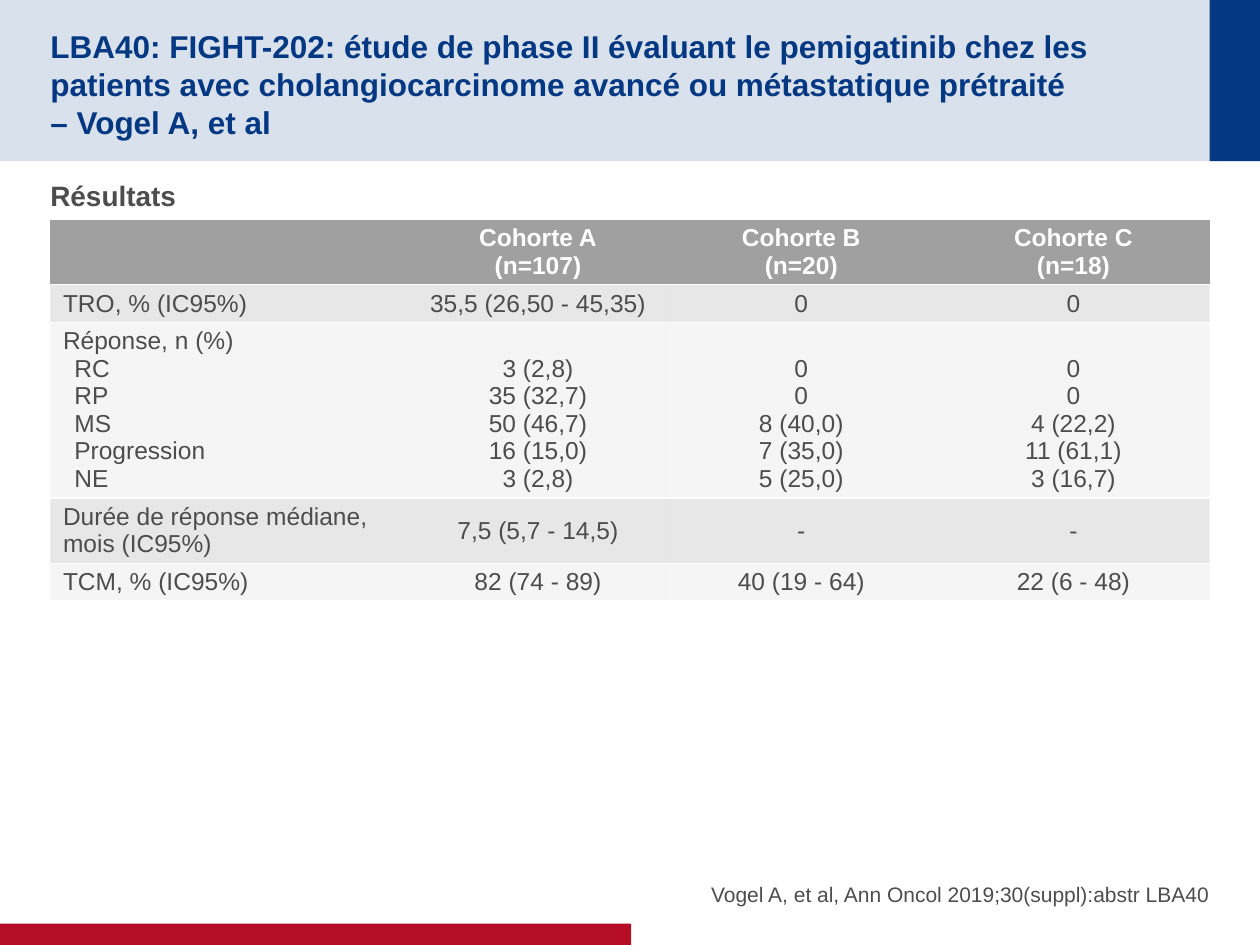
from lxml.etree import SubElement
from pptx import Presentation
from pptx.dml.color import RGBColor
from pptx.enum.shapes import MSO_SHAPE
from pptx.enum.text import MSO_ANCHOR, MSO_AUTO_SIZE, PP_ALIGN
from pptx.oxml import parse_xml
from pptx.oxml.ns import nsdecls, qn
from pptx.util import Inches, Pt

# Content
TITLE = ["LBA40: FIGHT-202: étude de phase II évaluant le pemigatinib chez les "
         "patients avec cholangiocarcinome avancé ou métastatique prétraité",
         "– Vogel A, et al"]
HEADING = "Résultats"
SOURCE = "Vogel A, et al, Ann Oncol 2019;30(suppl):abstr LBA40"
HEADER = ["", "Cohorte A\v(n=107)", "Cohorte B\v(n=20)", "Cohorte C\v(n=18)"]
ROWS = [
    ["TRO, % (IC95%)", "35,5 (26,50 - 45,35)", "0", "0"],
    ["Réponse, n (%)\nRC\nRP\nMS\nProgression\nNE",
     "3 (2,8)\n35 (32,7)\n50 (46,7)\n16 (15,0)\n3 (2,8)",
     "0\n0\n8 (40,0)\n7 (35,0)\n5 (25,0)",
     "0\n0\n4 (22,2)\n11 (61,1)\n3 (16,7)"],
    ["Durée de réponse médiane, mois (IC95%)", "7,5 (5,7 - 14,5)", "-", "-"],
    ["TCM, % (IC95%)", "82 (74 - 89)", "40 (19 - 64)", "22 (6 - 48)"],
]
COL_WIDTHS = [2.86, 2.02, 2.16, 2.16]
ROW_HEIGHTS = [0.52, 0.3, 1.39, 0.52, 0.29]
BAND_ALPHAS = [25, 10]
COLORS = {"navy": "043882", "red": "B60D27", "text": "4D4D4D",
          "gray": "A0A0A0", "white": "FFFFFF"}
LEFT, WIDTH = 0.4, 9.2
NO_STYLE = "{2D5ABB26-0587-4C30-8999-92F81FD0307C}"


def set_fill(fill, color, alpha=100):
    fill.solid()
    fill.fore_color.rgb = RGBColor.from_string(COLORS[color])
    if alpha < 100:
        clr = fill._xPr.find(qn("a:solidFill"))[0]
        SubElement(clr, qn("a:alpha"), val=str(alpha * 1000))


def add_bar(s, left, top, width, height, color, alpha=100):
    sp = s.shapes.add_shape(MSO_SHAPE.RECTANGLE, Inches(left), Inches(top),
                            Inches(width), Inches(height))
    sp.shadow.inherit = False
    sp.line.fill.background()
    set_fill(sp.fill, color, alpha)


def add_run(p, text, size, color, bold=False):
    """Add text to a paragraph, breaking the line at each vertical tab."""
    for i, line in enumerate(text.split("\v")):
        if i:
            p.add_line_break()
        r = p.add_run()
        r.text = line
        r.font.name, r.font.size, r.font.bold = "Arial", Pt(size), bold
        r.font.color.rgb = RGBColor.from_string(COLORS[color])


def set_frame(tf, anchor, top=0, bottom=0):
    tf.word_wrap = True
    tf.auto_size = MSO_AUTO_SIZE.NONE
    tf.vertical_anchor = anchor
    tf.margin_left = tf.margin_right = 0
    tf.margin_top, tf.margin_bottom = Inches(top), Inches(bottom)


def add_text(s, box, text, size, anchor, align, inset=0, bold=False):
    tf = s.shapes.add_textbox(*map(Inches, box)).text_frame
    set_frame(tf, anchor, inset, inset)
    p = tf.paragraphs[0]
    p.alignment, p.space_after = align, Pt(4)
    add_run(p, text, size, "text", bold)


def add_rules(cell):
    """White 1 pt lines above and below a cell."""
    for i, tag in enumerate(("lnT", "lnB")):
        cell._tc.get_or_add_tcPr().insert(i, parse_xml(
            f'<a:{tag} {nsdecls("a")} w="12700"><a:solidFill>'
            f'<a:srgbClr val="{COLORS["white"]}"/></a:solidFill></a:{tag}>'))


def fill_cell(cell, text, row, col):
    header = row == 0
    cell.margin_left = cell.margin_right = Inches(0.1)
    cell.margin_top = cell.margin_bottom = Inches(0.04)
    lines = text.split("\n")
    # Stacked values line up with the last lines of their label
    stacked = col > 0 and len(lines) > 1
    cell.vertical_anchor = MSO_ANCHOR.BOTTOM if stacked else MSO_ANCHOR.MIDDLE
    tf = cell.text_frame
    for i, line in enumerate(lines):
        p = tf.add_paragraph() if i else tf.paragraphs[0]
        p.alignment = PP_ALIGN.CENTER if col else PP_ALIGN.LEFT
        if i and not col:
            p._p.get_or_add_pPr().set("marL", str(Inches(0.09)))
        if line:
            add_run(p, line, 14, "white" if header else "text", header)
    set_fill(cell.fill, "gray", 100 if header else BAND_ALPHAS[(row - 1) % 2])
    add_rules(cell)


def add_results(s):
    rows = [HEADER] + ROWS
    frame = s.shapes.add_table(len(rows), len(HEADER), Inches(LEFT), Inches(1.74),
                               Inches(WIDTH), Inches(sum(ROW_HEIGHTS)))
    table = frame.table
    table.horz_banding = False
    table._tbl.tblPr.find(qn("a:tableStyleId")).text = NO_STYLE
    for column, width in zip(table.columns, COL_WIDTHS):
        column.width = Inches(width)
    for i, (values, height) in enumerate(zip(rows, ROW_HEIGHTS)):
        table.rows[i].height = Inches(height)
        for j, value in enumerate(values):
            fill_cell(table.cell(i, j), value, i, j)


def main():
    prs = Presentation()
    prs.slide_width, prs.slide_height = Inches(10), Inches(7.5)
    s = prs.slides.add_slide(prs.slide_layouts[5])

    # Title band and footer bar
    add_bar(s, 0, 0, 10, 1.28, "navy", 15)
    add_bar(s, 9.6, 0, 0.4, 1.28, "navy")
    add_bar(s, 0, 7.33, 5.01, 0.17, "red")

    # Title, brought in front of its band
    title = s.shapes.title
    title.left, title.top = Inches(LEFT), Inches(0.2)
    title.width, title.height = Inches(9.13), Inches(0.88)
    set_frame(title.text_frame, MSO_ANCHOR.MIDDLE, top=0.05)
    p = title.text_frame.paragraphs[0]
    p.alignment = PP_ALIGN.LEFT
    add_run(p, "\v".join(TITLE), 18, "navy", True)
    s.shapes._spTree.append(title._element)

    # Heading, source and results table
    add_text(s, (LEFT, 1.37, WIDTH, 0.37), HEADING, 16, MSO_ANCHOR.TOP,
             PP_ALIGN.LEFT, 0.05, True)
    add_text(s, (5.08, 6.67, 4.52, 0.53), SOURCE, 12, MSO_ANCHOR.BOTTOM,
             PP_ALIGN.RIGHT)
    add_results(s)
    prs.save("out.pptx")


if __name__ == "__main__":
    main()
